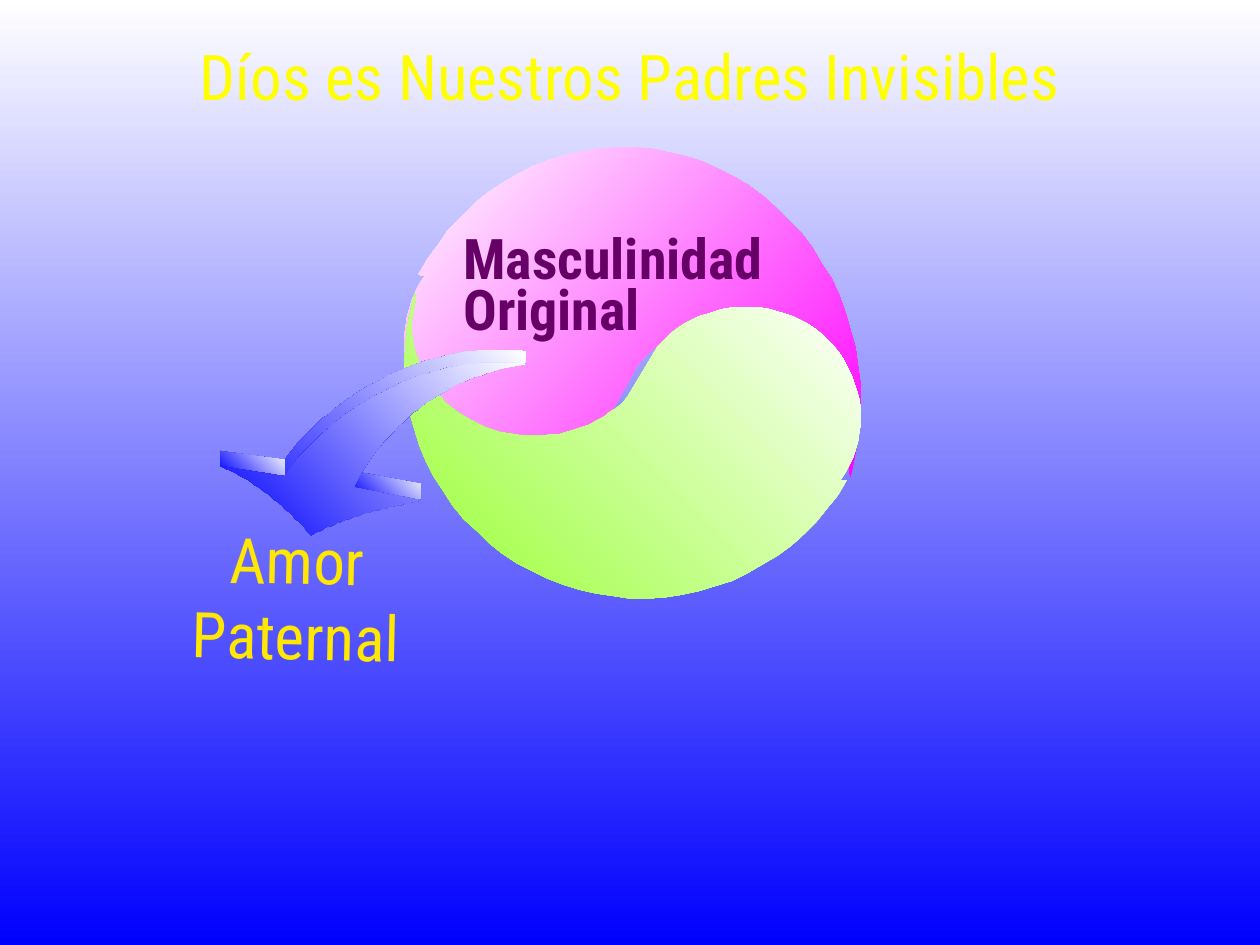
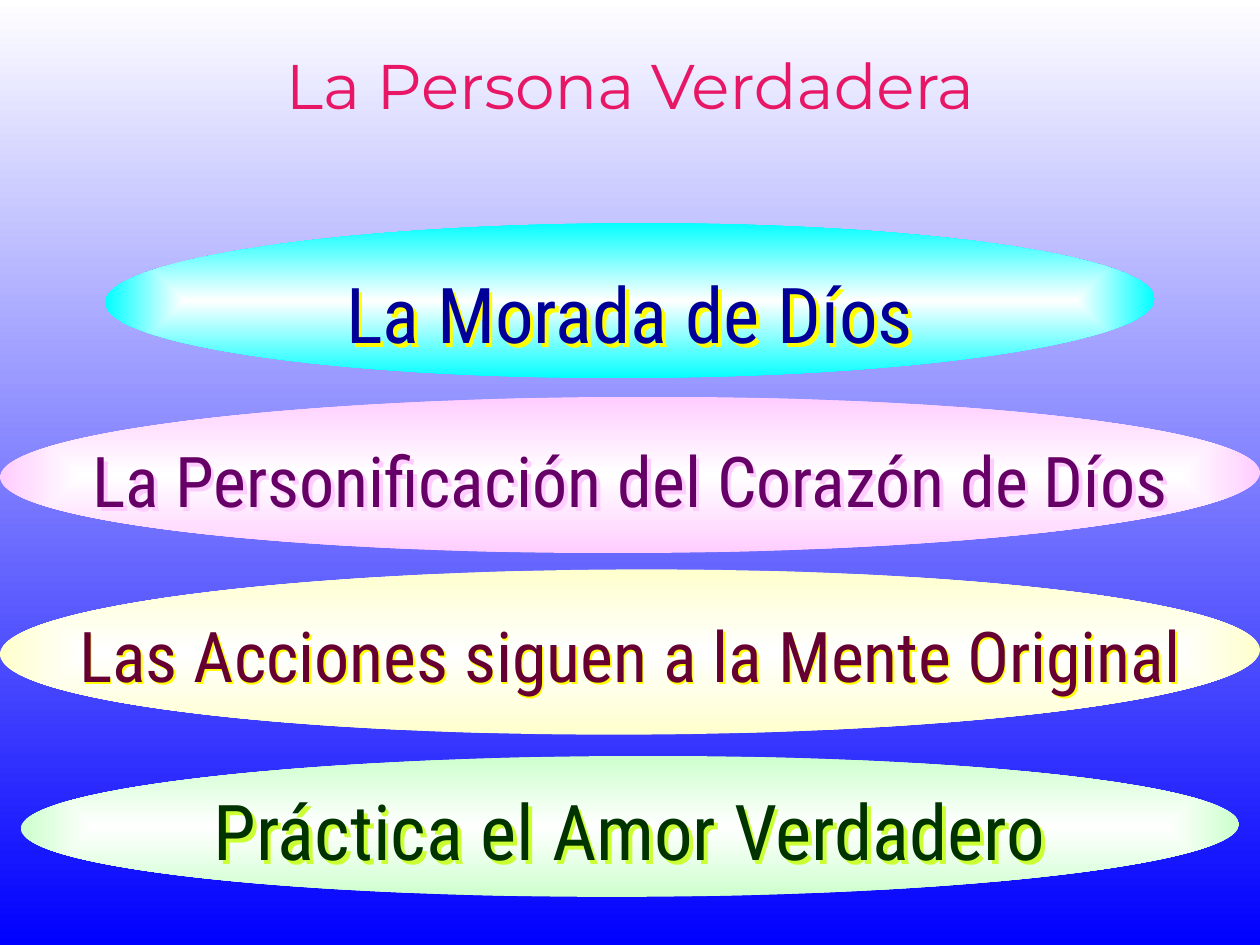
import dataclasses
import math
import typing

import lxml.etree
import pptx
import pptx.dml.color
import pptx.enum.shapes
import pptx.enum.text
import pptx.oxml.ns
import pptx.util

Cm = pptx.util.Cm
Pt = pptx.util.Pt
RGBColor = pptx.dml.color.RGBColor
qn = pptx.oxml.ns.qn

WHITE = RGBColor(0xFF, 0xFF, 0xFF)
BLUE = RGBColor(0x00, 0x00, 0xFF)
YELLOW = RGBColor(0xFF, 0xFF, 0x00)
GOLD = RGBColor(0xFF, 0xE7, 0x01)
CRIMSON = RGBColor(0xE8, 0x17, 0x66)
MAGENTA = RGBColor(0xFF, 0x00, 0xFF)
LIME = RGBColor(0x99, 0xFF, 0x33)
PURPLE = RGBColor(0x66, 0x00, 0x66)
NAVY = RGBColor(0x00, 0x00, 0x99)
WINE = RGBColor(0x66, 0x00, 0x33)
FOREST = RGBColor(0x00, 0x33, 0x00)
CYAN = RGBColor(0x00, 0xFF, 0xFF)
PALE_PINK = RGBColor(0xFF, 0xCC, 0xFF)
PALE_YELLOW = RGBColor(0xFF, 0xFF, 0xCC)
PALE_GREEN = RGBColor(0xCC, 0xFF, 0xCC)
ACID_GREEN = RGBColor(0xCC, 0xFF, 0x33)

CONDENSED = "Roboto Condensed"
TITLE_FONT = "Montserrat"
PAGE_WIDTH = 25.4
PAGE_HEIGHT = 19.05
DRAWING_UNIT = Cm(0.0254)
CURVE_STEPS = 40


class Point(typing.NamedTuple):
    x: float
    y: float


@dataclasses.dataclass(frozen=True)
class Arc:
    center: Point
    radius_x: float
    radius_y: float
    start: float
    end: float

    def points(self) -> list[Point]:
        step = (self.end - self.start) / CURVE_STEPS
        angles = [math.radians(self.start + step * index) for index in range(CURVE_STEPS + 1)]
        return [Point(self.center.x + self.radius_x * math.cos(angle),
                      self.center.y + self.radius_y * math.sin(angle)) for angle in angles]


@dataclasses.dataclass(frozen=True)
class Bezier:
    start: Point
    start_pull: Point
    end_pull: Point
    end: Point

    def at(self, t: float) -> Point:
        weights = ((1 - t) ** 3, 3 * t * (1 - t) ** 2, 3 * t ** 2 * (1 - t), t ** 3)
        controls = (self.start, self.start_pull, self.end_pull, self.end)
        return Point(sum(w * c.x for w, c in zip(weights, controls)),
                     sum(w * c.y for w, c in zip(weights, controls)))

    def points(self) -> list[Point]:
        return [self.at(index / CURVE_STEPS) for index in range(CURVE_STEPS + 1)]


@dataclasses.dataclass(frozen=True)
class Frame:
    left: float
    top: float
    width: float
    height: float


@dataclasses.dataclass(frozen=True)
class TextStyle:
    size: int
    color: RGBColor
    font: str = CONDENSED
    bold: bool = False
    align: typing.Any = pptx.enum.text.PP_ALIGN.CENTER
    spacing: typing.Any = None


@dataclasses.dataclass(frozen=True)
class Band:
    text: str
    oval: Frame
    label: Frame
    tint: RGBColor
    style: TextStyle
    shadow: RGBColor
    shadow_offset: float = 0.11


def centered(top: float, width: float, height: float) -> Frame:
    return Frame((PAGE_WIDTH - width) / 2, top, width, height)


BANDS = [
    Band("La Morada de Díos", centered(4.5, 21.16, 3.12), centered(5.18, 14.71, 2.21),
         CYAN, TextStyle(44, NAVY, spacing=Pt(55)), YELLOW),
    Band("La Personificación del Corazón de Díos", centered(8, 25.4, 3.15),
         centered(8.69, 23.83, 1.96), PALE_PINK, TextStyle(40, PURPLE), PALE_PINK),
    Band("Las Acciones siguen a la Mente Original", centered(11.48, 25.4, 3.33),
         centered(12.22, 24.18, 1.96), PALE_YELLOW, TextStyle(40, WINE), YELLOW, 0.05),
    Band("Práctica el Amor Verdadero", centered(15.24, 24.56, 2.84),
         centered(15.67, 21.01, 2.13), PALE_GREEN, TextStyle(44, FOREST), ACID_GREEN),
]

HOLLOW = Arc(Point(580, 350), 97, 94, 220, 375)
OUTER_RIM = Arc(Point(495, 319), 188, 202, 17, -150)
ROUND_LOBE = Arc(Point(412, 272), 91, 95, 214, 40)
REFLECTION_SUM = Point(1004, 583)
REFLECTION_SQUASH = 0.925

TAIL_TOP = Point(417, 279)
TAIL_BOTTOM = Point(417, 289)
LEFT_JOINT = Point(226, 365)
LEFT_BARB = Point(175, 358)
ARROW_TIP = Point(247, 411)
RIGHT_BARB = Point(334, 384)
RIGHT_JOINT = Point(281, 374)
RIGHT_FOLD = Point(286, 375)
OUTER_EDGE = Bezier(TAIL_TOP, Point(350, 270), Point(270, 305), LEFT_JOINT)
LEFT_HEAD = Bezier(LEFT_BARB, Point(199, 367), Point(223, 385), ARROW_TIP)
RIGHT_HEAD = Bezier(ARROW_TIP, Point(267, 400), Point(296, 391), RIGHT_BARB)
INNER_EDGE = Bezier(RIGHT_JOINT, Point(298, 337), Point(345, 289), TAIL_BOTTOM)


def masculine_half() -> list[Point]:
    return HOLLOW.points() + OUTER_RIM.points() + ROUND_LOBE.points()


def feminine_half() -> list[Point]:
    return [Point(REFLECTION_SUM.x - point.x,
                  REFLECTION_SUM.y - REFLECTION_SQUASH * point.y)
            for point in masculine_half()]


def lower(point: Point) -> Point:
    return Point(point.x, TAIL_BOTTOM.y + 1.03 * (point.y - TAIL_TOP.y))


def lower_curve(curve: Bezier) -> Bezier:
    return Bezier(lower(curve.start), lower(curve.start_pull),
                  lower(curve.end_pull), lower(curve.end))


def join_curves(curves: list[Bezier]) -> list[Point]:
    return [point for curve in curves for point in curve.points()]


def arrow_faces() -> list[list[Point]]:
    edges = [OUTER_EDGE, LEFT_HEAD, RIGHT_HEAD]
    front_inner = dataclasses.replace(lower_curve(INNER_EDGE), end=TAIL_BOTTOM)
    back = join_curves(edges + [INNER_EDGE])
    front = join_curves([lower_curve(edge) for edge in edges] + [front_inner])
    right_side = [RIGHT_BARB, lower(RIGHT_BARB), lower(RIGHT_JOINT), RIGHT_FOLD]
    left_side = [LEFT_BARB, lower(LEFT_BARB), lower(LEFT_JOINT), LEFT_JOINT]
    return [back, right_side, left_side, front]


def place(shape: typing.Any, frame: Frame) -> None:
    shape.left, shape.top = Cm(frame.left), Cm(frame.top)
    shape.width, shape.height = Cm(frame.width), Cm(frame.height)


def set_gradient(fill: typing.Any, start: RGBColor, end: RGBColor, clockwise: int) -> None:
    fill.gradient()
    for stop, color in zip(fill.gradient_stops, (start, end)):
        stop.color.rgb = color
    fill.gradient_angle = 360 - clockwise


def write_text(shape: typing.Any, lines: list[str], style: TextStyle) -> None:
    frame = shape.text_frame
    frame.word_wrap = True
    frame.auto_size = pptx.enum.text.MSO_AUTO_SIZE.NONE
    frame.vertical_anchor = pptx.enum.text.MSO_ANCHOR.TOP
    for index, line in enumerate(lines):
        para = frame.add_paragraph() if index else frame.paragraphs[0]
        para.alignment = style.align
        if style.spacing is not None:
            para.line_spacing = style.spacing
        span = para.add_run()
        span.text = line
        span.font.name = style.font
        span.font.size = Pt(style.size)
        span.font.bold = style.bold
        span.font.color.rgb = style.color


def add_page(deck: typing.Any, title: str, frame: Frame, style: TextStyle) -> typing.Any:
    page = deck.slides.add_slide(deck.slide_layouts.get_by_name("Title Only"))
    place(page.shapes.title, frame)
    write_text(page.shapes.title, [title], style)
    return page


def add_label(page: typing.Any, lines: list[str], frame: Frame, style: TextStyle) -> typing.Any:
    box = page.shapes.add_textbox(0, 0, 0, 0)
    place(box, frame)
    write_text(box, lines, style)
    return box


def add_outline(page: typing.Any, points: list[Point], start: RGBColor, end: RGBColor,
                clockwise: int) -> None:
    builder = page.shapes.build_freeform(*points[0], scale=DRAWING_UNIT)
    builder.add_line_segments(points[1:], close=True)
    shape = builder.convert_to_shape()
    shape.shadow.inherit = False
    shape.line.fill.background()
    set_gradient(shape.fill, start, end, clockwise)


def radiate_from_center(shape: typing.Any) -> None:
    gradient = shape._element.spPr.find(qn("a:gradFill"))
    gradient.remove(gradient.find(qn("a:lin")))
    radial = lxml.etree.SubElement(gradient, qn("a:path"), {"path": "shape"})
    lxml.etree.SubElement(radial, qn("a:fillToRect"), dict.fromkeys("ltrb", "50000"))


def add_text_shadow(box: typing.Any, color: RGBColor, offset: float) -> None:
    effects = lxml.etree.SubElement(box._element.spPr, qn("a:effectLst"))
    shadow = lxml.etree.SubElement(effects, qn("a:outerShdw"), {
        "dist": str(int(Cm(offset))), "dir": "2700000", "algn": "ctr", "rotWithShape": "0"})
    lxml.etree.SubElement(shadow, qn("a:srgbClr"), {"val": str(color)})


def add_band(page: typing.Any, band: Band) -> None:
    oval = page.shapes.add_shape(pptx.enum.shapes.MSO_SHAPE.OVAL, 0, 0, 0, 0)
    place(oval, band.oval)
    oval.rotation = 359.8
    oval.shadow.inherit = False
    oval.line.fill.background()
    set_gradient(oval.fill, WHITE, band.tint, 0)
    radiate_from_center(oval)
    label = add_label(page, [band.text], band.label, band.style)
    add_text_shadow(label, band.shadow, band.shadow_offset)


def build_parents_page(deck: typing.Any) -> None:
    page = add_page(deck, "Díos es Nuestros Padres Invisibles",
                    centered(0.62, 23.7, 2.11), TextStyle(36, YELLOW))
    add_outline(page, masculine_half(), WHITE, MAGENTA, 45)
    add_outline(page, feminine_half(), LIME, WHITE, 315)
    for face in arrow_faces():
        add_outline(page, face, BLUE, WHITE, 315)
    add_label(page, ["Masculinidad Original"], Frame(9.09, 4.7, 7.01, 2.31),
              TextStyle(32, PURPLE, bold=True, align=pptx.enum.text.PP_ALIGN.LEFT, spacing=0.75))
    love = add_label(page, ["Amor", "Paternal"], Frame(1.07, 10.39, 9.73, 7.32),
                     TextStyle(36, GOLD))
    love.rotation = 1.2


def build_person_page(deck: typing.Any) -> None:
    page = add_page(deck, "La Persona Verdadera", centered(0.81, 23.65, 2.79),
                    TextStyle(36, CRIMSON, font=TITLE_FONT))
    for band in BANDS:
        add_band(page, band)


def main() -> None:
    deck = pptx.Presentation()
    deck.slide_width, deck.slide_height = Cm(PAGE_WIDTH), Cm(PAGE_HEIGHT)
    set_gradient(deck.slide_master.background.fill, WHITE, BLUE, 90)
    build_parents_page(deck)
    build_person_page(deck)
    deck.save("out.pptx")


if __name__ == "__main__":
    main()
